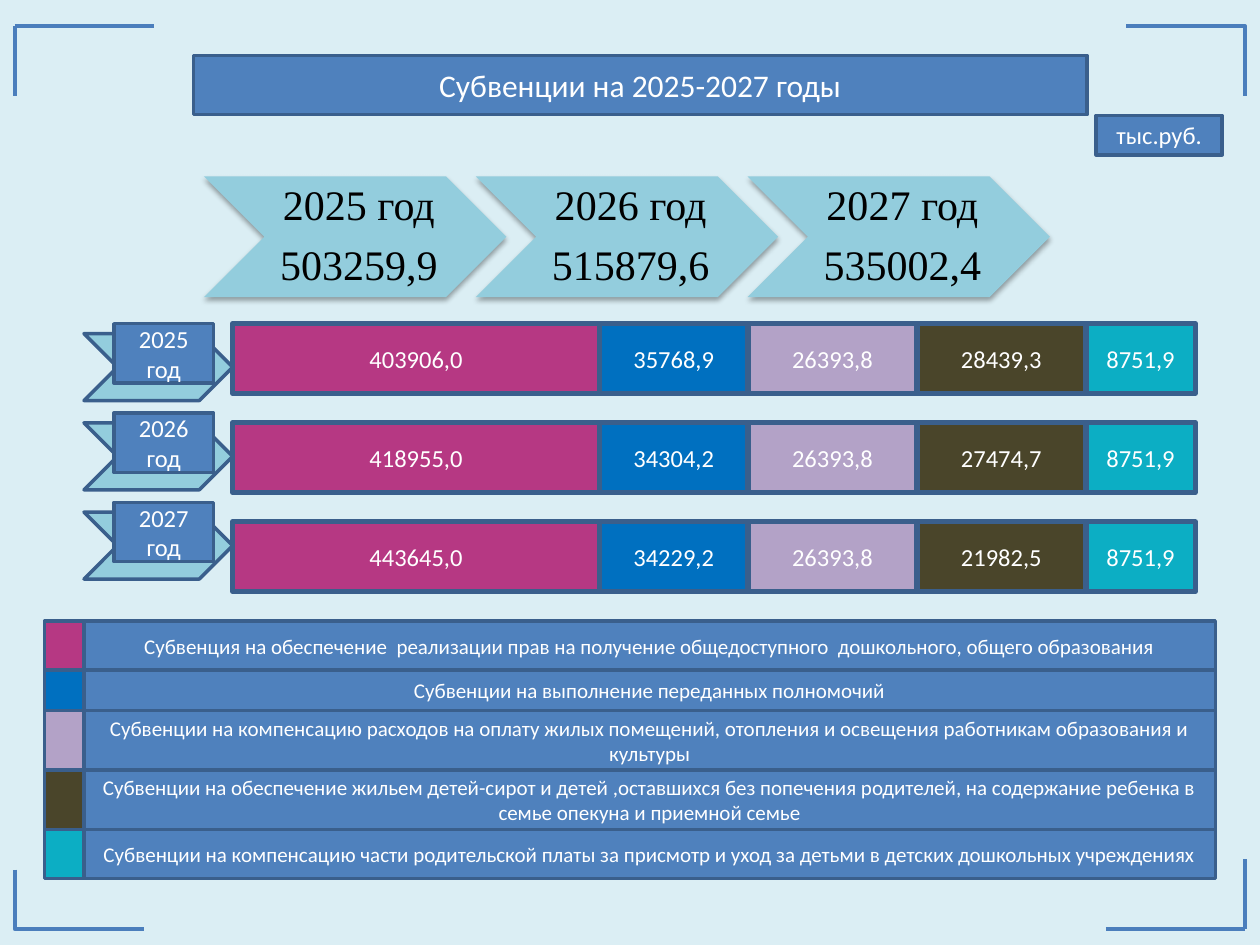
from itertools import accumulate

from lxml.etree import SubElement
from pptx import Presentation
from pptx.dml.color import RGBColor
from pptx.enum.shapes import MSO_CONNECTOR, MSO_SHAPE
from pptx.enum.text import MSO_ANCHOR, PP_ALIGN
from pptx.oxml.ns import qn
from pptx.util import Pt

YEARS = ["2025 год", "2026 год", "2027 год"]
TOTALS = ["503259,9", "515879,6", "535002,4"]
VALUES = [
    ["403906,0", "35768,9", "26393,8", "28439,3", "8751,9"],
    ["418955,0", "34304,2", "26393,8", "27474,7", "8751,9"],
    ["443645,0", "34229,2", "26393,8", "21982,5", "8751,9"],
]
BAR_WIDTHS = [209.5, 85, 96.5, 96.5, 62.5]
LEGEND = [
    ("B63883", 28, "Субвенция на обеспечение  реализации прав на получение "
                   "общедоступного  дошкольного, общего образования"),
    ("0070C0", 23, "Субвенции на выполнение переданных полномочий"),
    ("B3A2C7", 34, "Субвенции на компенсацию расходов на оплату жилых помещений, "
                   "отопления и освещения работникам образования и культуры"),
    ("4A452A", 34, "Субвенции на обеспечение жильем детей-сирот и детей ,оставшихся "
                   "без попечения родителей, на содержание ребенка в семье опекуна "
                   "и приемной семье"),
    ("0CAEC4", 28, "Субвенции на компенсацию части родительской платы за присмотр "
                   "и уход за детьми в детских дошкольных учреждениях"),
]


def color(value):
    return RGBColor.from_string(value)


def set_values(target, values):
    for name, value in values.items():
        setattr(target, name, value)


def starts(first, sizes):
    """Return the start of each item in a row of touching items."""
    return list(accumulate(sizes[:-1], initial=first))


class SlideBuilder:
    blue, outline, frame, chevron_fill = "4F81BD", "3A5F8C", "4B7EBC", "93CDDD"

    def __init__(self, slide):
        self.slide = slide

    def add_text(self, shape, lines, font, para_format, frame_format):
        """Put one centred paragraph per line into the shape."""
        text_frame = shape.text_frame
        set_values(text_frame, {"word_wrap": True,
                                "vertical_anchor": MSO_ANCHOR.MIDDLE, **frame_format})
        text_frame.text = "\n".join(lines)
        for para in text_frame.paragraphs:
            set_values(para, {"alignment": PP_ALIGN.CENTER, **para_format})
            for span in para.runs:
                set_values(span.font, {"name": font[0], "size": Pt(font[1])})
                span.font.color.rgb = color(font[2])

    def shape(self, kind, area, fill, line_width):
        box = self.slide.shapes.add_shape(kind, *map(Pt, area))
        box.shadow.inherit = False
        box.fill.solid()
        box.fill.fore_color.rgb = color(fill)
        if line_width:
            box.line.color.rgb = color(self.outline)
            box.line.width = Pt(line_width)
        else:
            box.line.fill.background()
        return box

    def box(self, area, text="", size=14, fill=blue, line_width=2):
        box = self.shape(MSO_SHAPE.RECTANGLE, area, fill, line_width)
        if text:
            self.add_text(box, [text], ("Calibri", size, "FFFFFF"), {}, {})

    def chevron(self, area, line_width=2):
        return self.shape(MSO_SHAPE.CHEVRON, area, self.chevron_fill, line_width)

    def total(self, left, lines):
        """Draw a shadowed chevron with its text box on top."""
        chevron = self.chevron((left, 100.8, 172.8, 69), line_width=0)
        effects = chevron._element.spPr.find(qn("a:effectLst"))
        shadow = SubElement(effects, qn("a:outerShdw"), blurRad=str(Pt(3.1)),
                            dist=str(Pt(1.8)), dir="5400000", rotWithShape="0")
        black = SubElement(shadow, qn("a:srgbClr"), val="000000")
        SubElement(black, qn("a:alpha"), val="35000")
        label = self.slide.shapes.add_textbox(*map(Pt, (left + 34.6, 100.8, 103.7, 69)))
        self.add_text(label, lines, ("Times New Roman", 24, "000000"),
                      {"line_spacing": 0.9, "space_after": Pt(8.4)},
                      {"margin_left": Pt(7.2), "margin_right": Pt(3),
                       "margin_top": Pt(3), "margin_bottom": Pt(3)})

    def line(self, ends, bend=None):
        """Draw a straight line, or an elbow turning at the fraction bend."""
        kind = MSO_CONNECTOR.STRAIGHT if bend is None else MSO_CONNECTOR.ELBOW
        line = self.slide.shapes.add_connector(kind, *map(Pt, ends))
        line.line.color.rgb = color(self.frame)
        line.line.width = Pt(2.25)
        properties = line._element.spPr
        SubElement(properties, qn("a:effectLst"))
        if bend is not None:
            guides = properties.find(qn("a:prstGeom")).find(qn("a:avLst"))
            SubElement(guides, qn("a:gd"), name="adj1", fmla=f"val {round(bend * 100000)}")


def main():
    deck = Presentation()
    deck.slide_width, deck.slide_height = Pt(720), Pt(540)
    page = deck.slides.add_slide(deck.slide_layouts[6])
    page.background.fill.solid()
    page.background.fill.fore_color.rgb = color("DBEEF4")
    builder = SlideBuilder(page)

    left, top, right, bottom = 8.5, 15, 711.5, 531
    builder.line((left, 497, 82, bottom), bend=0)
    builder.line((643.5, top, right, 55), bend=1)
    builder.line((left, top, 88, top))
    builder.line((left, top, left, 55))
    builder.line((632, bottom, right, bottom))
    builder.line((right, 491, right, bottom))

    builder.box((110.6, 31.8, 510.5, 33.8), "Субвенции на 2025-2027 годы", 18)
    builder.box((626.4, 66, 72, 22.5), "тыс.руб.")

    colors = [fill for fill, _, _ in LEGEND]
    bar_lefts = starts(133, BAR_WIDTHS)
    for index, (year, total, values) in enumerate(zip(YEARS, TOTALS, VALUES)):
        builder.total(116.6 + 155.3 * index, [year, total])
        builder.chevron((48, 190.6 + 51 * index, 85, 38.3))
        for bar_left, width, fill, value in zip(bar_lefts, BAR_WIDTHS, colors, values):
            builder.box((bar_left, 185 + 56.6 * index, width, 39.7), value,
                        fill=fill, line_width=3)
        builder.box((65.2, 185 + 51 * index, 56.8, 34), year)

    legend_tops = starts(355, [height for _, height, _ in LEGEND])
    for row_top, (fill, height, text) in zip(legend_tops, LEGEND):
        builder.box((48, row_top, 646.5, height), text, 12)
        builder.box((25.5, row_top, 22.5, height), fill=fill)

    deck.save("out.pptx")


if __name__ == "__main__":
    main()
